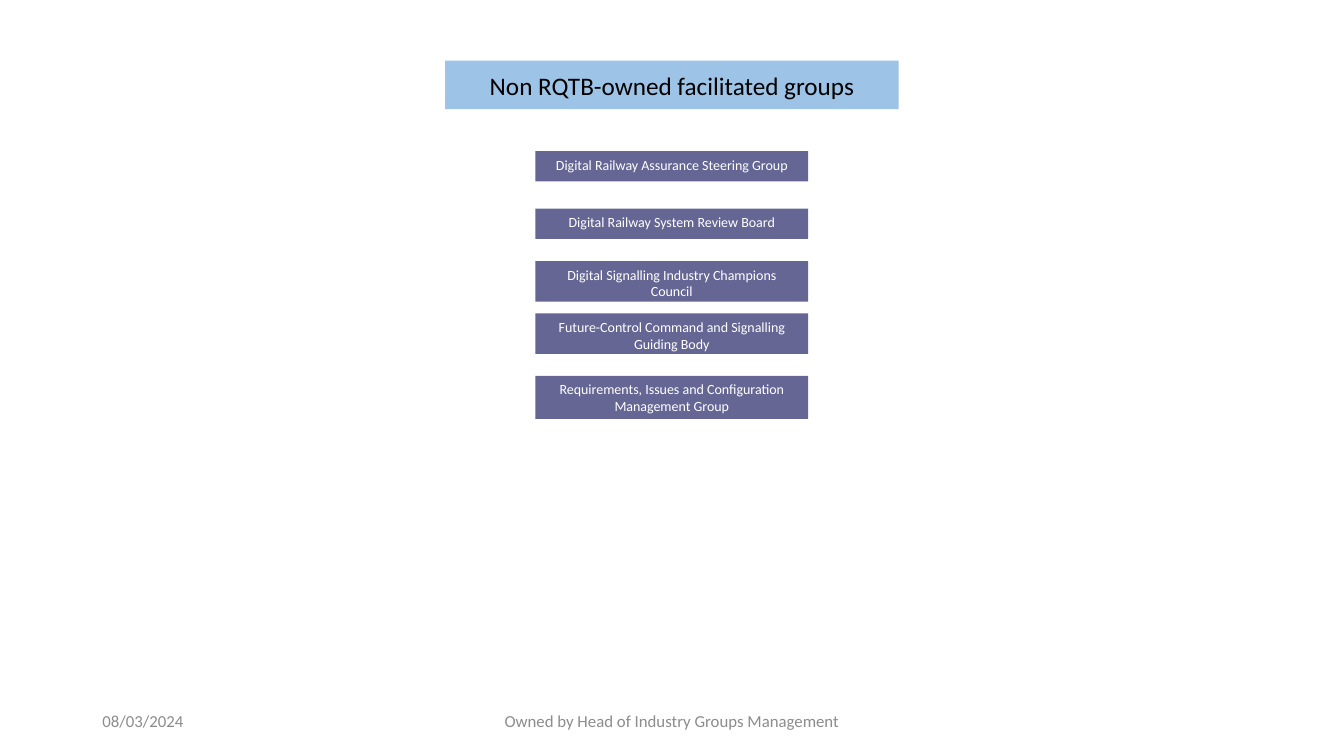
"""Build the slide of facilitated industry groups."""
from pptx import Presentation
from pptx.dml.color import RGBColor
from pptx.enum.shapes import MSO_SHAPE
from pptx.enum.text import MSO_ANCHOR, MSO_AUTO_SIZE, PP_ALIGN
from pptx.util import Cm, Pt

COLORS = {"title": "9DC3E6", "group": "656694", "black": "000000",
          "white": "FFFFFF", "grey": "8C8C8C"}


def write(sp, text, size, color, align=PP_ALIGN.CENTER, anchor=MSO_ANCHOR.MIDDLE):
    tf = sp.text_frame
    tf.word_wrap = True
    tf.auto_size = MSO_AUTO_SIZE.NONE
    tf.vertical_anchor = anchor
    p = tf.paragraphs[0]
    p.alignment = align
    r = p.add_run()
    r.text = text
    r.font.name = "Calibri"
    r.font.size = Pt(size)
    r.font.color.rgb = RGBColor.from_string(COLORS[color])


def fill(sp, color):
    sp.fill.solid()
    sp.fill.fore_color.rgb = RGBColor.from_string(COLORS[color])
    sp.line.fill.background()


prs = Presentation()
prs.slide_width, prs.slide_height = Cm(33.87), Cm(19.05)
s = prs.slides.add_slide(prs.slide_layouts[5])

title = s.shapes.title
title.left, title.top, title.width, title.height = Cm(11.22), Cm(1.53), Cm(11.43), Cm(1.22)
fill(title, "title")
write(title, "Non RQTB-owned facilitated groups", 18, "black")

groups = [
    ("Digital Railway Assurance Steering Group", 3.81, 0.76),
    ("Digital Railway System Review Board", 5.26, 0.76),
    ("Digital Signalling Industry Champions Council", 6.58, 1.02),
    ("Future-Control Command and Signalling Guiding Body", 7.9, 1.02),
    ("Requirements, Issues and Configuration Management Group", 9.47, 1.09),
]
for name, top, height in groups:
    sp = s.shapes.add_shape(MSO_SHAPE.RECTANGLE, Cm(13.49), Cm(top), Cm(6.88), Cm(height))
    sp.shadow.inherit = False
    fill(sp, "group")
    write(sp, name, 10, "white", anchor=MSO_ANCHOR.TOP)

footers = [
    ("08/03/2024", 2.33, 7.62, PP_ALIGN.LEFT),
    ("Owned by Head of Industry Groups Management", 11.22, 11.43, PP_ALIGN.CENTER),
]
for text, left, width, align in footers:
    sp = s.shapes.add_textbox(Cm(left), Cm(17.65), Cm(width), Cm(1.02))
    write(sp, text, 12, "grey", align)

prs.save("out.pptx")
